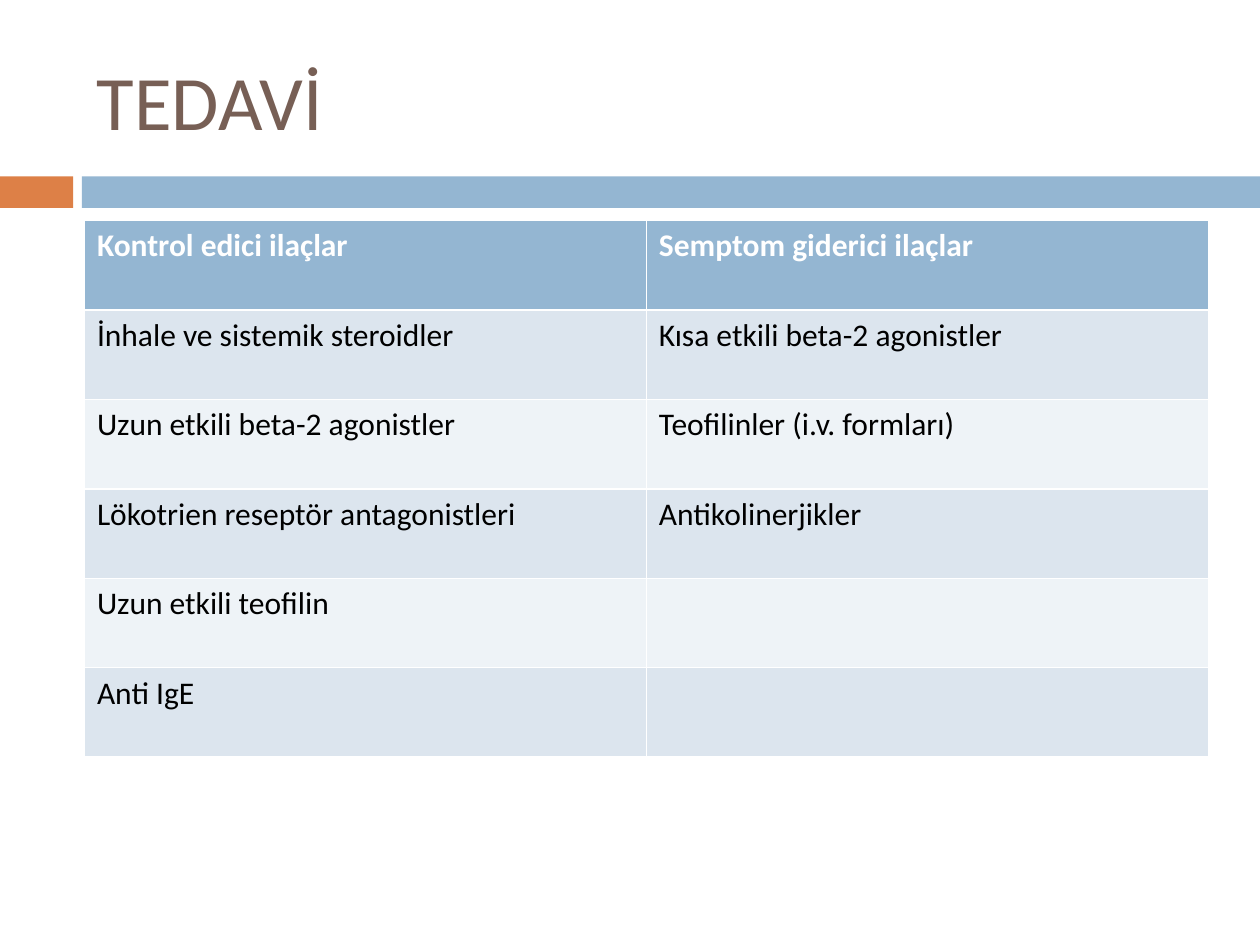
from pptx import Presentation
from pptx.dml.color import RGBColor
from pptx.enum.shapes import MSO_SHAPE
from pptx.enum.text import MSO_ANCHOR
from pptx.util import Inches, Pt

FONT = "Calibri"
COLORS = {
    "orange": "DD8047",
    "blue": "94B6D2",
    "brown": "775F55",
    "band_dark": "DCE5EE",
    "band_light": "EEF3F7",
    "white": "FFFFFF",
    "black": "000000",
}
TREATMENTS = [
    ("Kontrol edici ilaçlar", "Semptom giderici ilaçlar"),
    ("İnhale ve sistemik steroidler", "Kısa etkili beta-2 agonistler"),
    ("Uzun etkili beta-2 agonistler", "Teofilinler (i.v. formları)"),
    ("Lökotrien reseptör antagonistleri", "Antikolinerjikler"),
    ("Uzun etkili teofilin", ""),
    ("Anti IgE", ""),
]
ROW_HEIGHT = 0.71


def rgb(name):
    return RGBColor.from_string(COLORS[name])


def style_paragraph(p, size, color, bold=False):
    p.font.name = FONT
    p.font.size = Pt(size)
    p.font.bold = bold
    p.font.color.rgb = rgb(color)


def add_bar(s, left, width, color):
    sp = s.shapes.add_shape(MSO_SHAPE.RECTANGLE, Inches(left), Inches(1.4),
                            Inches(width), Inches(0.25))
    sp.shadow.inherit = False
    sp.fill.solid()
    sp.fill.fore_color.rgb = rgb(color)
    sp.line.fill.background()


def add_title(s, text):
    sp = s.shapes.add_textbox(Inches(0.67), Inches(0.25), Inches(8.92), Inches(1.08))
    tf = sp.text_frame
    tf.word_wrap = True
    tf.vertical_anchor = MSO_ANCHOR.MIDDLE
    p = tf.paragraphs[0]
    p.text = text
    style_paragraph(p, 44, "brown")


def add_treatment_table(s, rows):
    # The default table style supplies the white cell borders
    table = s.shapes.add_table(len(rows), len(rows[0]), Inches(0.67), Inches(1.75),
                               Inches(8.92), Inches(ROW_HEIGHT * len(rows))).table
    for i, row in enumerate(rows):
        header = i == 0
        fill = "blue" if header else "band_dark" if i % 2 else "band_light"
        for j, text in enumerate(row):
            cell = table.cell(i, j)
            cell.fill.solid()
            cell.fill.fore_color.rgb = rgb(fill)
            p = cell.text_frame.paragraphs[0]
            if text:
                p.text = text
            style_paragraph(p, 18, "white" if header else "black", header)


def main():
    prs = Presentation()
    prs.slide_width, prs.slide_height = Inches(10), Inches(7.5)
    s = prs.slides.add_slide(prs.slide_layouts[6])

    # Divider under the title
    add_bar(s, 0, 0.58, "orange")
    add_bar(s, 0.65, 9.35, "blue")

    # Title and table
    add_title(s, "TEDAVİ")
    add_treatment_table(s, TREATMENTS)

    prs.save("out.pptx")


if __name__ == "__main__":
    main()
